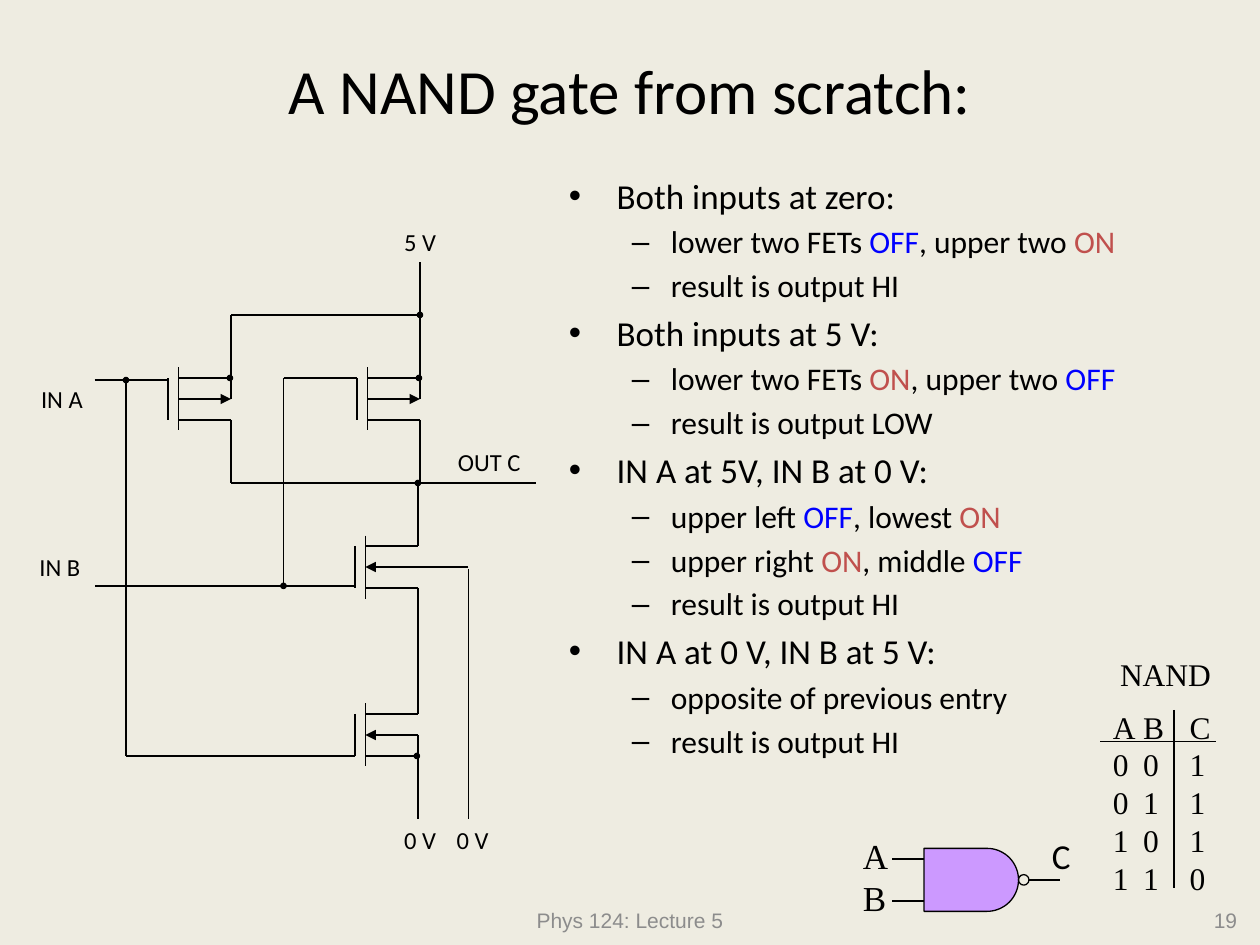
from dataclasses import dataclass
from math import cos, pi, sin

from pptx import Presentation
from pptx.dml.color import RGBColor
from pptx.enum.shapes import MSO_CONNECTOR as Link, MSO_SHAPE as Preset
from pptx.enum.text import MSO_ANCHOR as Anchor, MSO_AUTO_SIZE as Fit, PP_ALIGN as Align
from pptx.oxml.ns import qn
from pptx.util import Inches, Pt
from lxml.etree import SubElement

BLACK = RGBColor(0x00, 0x00, 0x00)
GREY = RGBColor(0x8C, 0x8C, 0x8C)
CREAM = RGBColor(0xEE, 0xEC, 0xE1)
LILAC = RGBColor(0xCC, 0x99, 0xFF)
STATES = {"ON": RGBColor(0xC0, 0x50, 0x4D), "OFF": RGBColor(0x00, 0x00, 0xFF)}
COLUMNS, ROWS = 120, 90
UNIT = Inches(10) / COLUMNS
TABLE_FONT = "Times New Roman"
CASES = [
    ("Both inputs at zero:",
     ["lower two FETs |OFF|, upper two |ON", "result is output HI"]),
    ("Both inputs at 5 V:",
     ["lower two FETs |ON|, upper two |OFF", "result is output LOW"]),
    ("IN A at 5V, IN B at 0 V:",
     ["upper left |OFF|, lowest |ON", "upper right |ON|, middle |OFF",
      "result is output HI"]),
    ("IN A at 0 V, IN B at 5 V:",
     ["opposite of previous entry", "result is output HI"]),
]


@dataclass
class Box:
    """A region of the slide, measured in grid columns and rows."""
    left: float
    top: float
    width: float = 0
    height: float = 0

    def inner(self, left, top, width=0, height=0):
        """Return a box placed relative to this one."""
        return Box(self.left + left, self.top + top, width, height)

    def emu(self):
        """Return left, top, width and height in slide lengths."""
        return [round(n * UNIT) for n in (self.left, self.top, self.width, self.height)]


def write(para, text, size=14, font="Calibri", color=BLACK, align=Align.LEFT):
    """Fill a paragraph, splitting at bars and colouring the switch states."""
    para.alignment = align
    for part in text.split("|"):
        span = para.add_run()
        span.text = part
        span.font.size = Pt(size)
        span.font.name = font
        span.font.color.rgb = STATES.get(part, color)


def add_text(page, box, lines, wrap=False, anchor=Anchor.TOP, **style):
    """Add a text box with one paragraph for each line and return its paragraphs."""
    frame = page.shapes.add_textbox(*box.emu()).text_frame
    frame.word_wrap = wrap
    frame.vertical_anchor = anchor
    for index, line in enumerate(lines):
        write(frame.add_paragraph() if index else frame.paragraphs[0], line, **style)
    return frame.paragraphs


def add_wire(page, box, start, end, arrow=False):
    """Draw a thin line between two grid points of a box."""
    ends = box.inner(*start).emu()[:2] + box.inner(*end).emu()[:2]
    wire = page.shapes.add_connector(Link.STRAIGHT, *ends)
    wire.line.color.rgb = BLACK
    wire.line.width = Pt(0.75)
    props = wire._element.spPr
    if arrow:
        SubElement(props.find(qn("a:ln")), qn("a:tailEnd"), type="triangle")
    SubElement(props, qn("a:effectLst"))


def outline(shape, fill=None):
    """Give a shape a thin black line and a plain or empty fill."""
    shape.shadow.inherit = False
    shape.line.color.rgb = BLACK
    shape.line.width = Pt(0.75)
    if fill is None:
        shape.fill.background()
    else:
        shape.fill.solid()
        shape.fill.fore_color.rgb = fill


def add_circle(page, box, center, size=0.5, fill=BLACK):
    """Add a circle centred on a grid point, by default a wire junction."""
    col, row = center
    place = box.inner(col - size / 2, row - size / 2, size, size)
    outline(page.shapes.add_shape(Preset.OVAL, *place.emu()), fill)


def add_transistor(page, box, gate_row, body, tie_row=None):
    """Draw a transistor with its leads, body arrow and optional body tie."""
    wires = [
        ((0, gate_row), (7, gate_row)), ((7, 0), (7, 4)), ((8, -1), (8, 5)),
        ((8, 0), (13, 0)), ((8, 4), (13, 4)), ((13, -6), (13, 0)), ((13, 4), (13, 10)),
    ]
    for start, end in wires:
        add_wire(page, box, start, end)
    add_wire(page, box, *body, arrow=True)
    if tie_row is not None:
        add_wire(page, box, (13, 2), (13, tie_row))
        add_circle(page, box, (12.9, tie_row))


def draw_circuit(page, box):
    """Draw the four transistors, the wires between them and their labels."""
    outward, inward = ((8, 2), (13, 2)), ((13, 2), (8, 2))
    add_transistor(page, box.inner(7, 15), 0.2, outward, tie_row=0)
    add_transistor(page, box.inner(25, 15), 0, outward, tie_row=0)
    add_transistor(page, box.inner(24.8, 31), 3.8, ((17.8, 2), (8, 2)))
    add_transistor(page, box.inner(24.8, 47), 4, inward, tie_row=4)
    wires = [
        ((38, 9), (20, 9)), ((10, 15), (10, 51)), ((10, 51), (25, 51)),
        ((25, 15), (25, 35)), ((25, 34.8), (7, 34.8)), ((20, 25), (49, 25)),
        ((38, 9), (38, 4)), ((42.6, 33.2), (42.6, 57)),
    ]
    for start, end in wires:
        add_wire(page, box, start, end)
    for joint in [(10, 15.2), (37.8, 25), (25, 34.8), (38, 9)]:
        add_circle(page, box, joint)
    labels = [("5 V", 38, 0), ("0 V", 38, 57), ("0 V", 43, 57),
              ("IN A", 3.9, 15), ("IN B", 3.7, 31), ("OUT C", 44.6, 21)]
    for text, center, row in labels:
        add_text(page, box.inner(center - 5, row, 10, 4), [text], align=Align.CENTER)


def add_bullet(para, mark, level, margin, hang, gap):
    """Turn a paragraph into a hanging bullet of the given level."""
    para.level = level
    para.space_before = Pt(gap)
    props = para._p.get_or_add_pPr()
    props.set("marL", str(Inches(margin)))
    props.set("indent", str(-Inches(hang)))
    SubElement(props, qn("a:buFont"), typeface="Arial")
    SubElement(props, qn("a:buChar"), char=mark)


def list_cases(page, box):
    """List each input case with its consequences."""
    frame = page.shapes.add_textbox(*box.emu()).text_frame
    frame.word_wrap = True
    para = frame.paragraphs[0]
    for index, (case, results) in enumerate(CASES):
        if index:
            para = frame.add_paragraph()
        write(para, case, size=20)
        add_bullet(para, "•", 0, 0.38, 0.38, 4.2)
        for result in results:
            para = frame.add_paragraph()
            write(para, result, size=18)
            add_bullet(para, "–", 1, 0.81, 0.31, 3.5)


def draw_truth_table(page, box):
    """Set the truth table in tabbed columns with its rules and heading."""
    rows = ["A\tB\tC", "0\t0\t1", "0\t1\t1", "1\t0\t1", "1\t1\t0"]
    for para in add_text(page, box.inner(0.8, 5, 15, 19), rows, size=18, font=TABLE_FONT):
        stops = SubElement(para._p.get_or_add_pPr(), qn("a:tabLst"))
        for stop in (0.24, 0.61):
            SubElement(stops, qn("a:tab"), pos=str(Inches(stop)), algn="l")
    add_wire(page, box, (0.8, 8.8), (11.8, 8.8))
    add_wire(page, box, (7.8, 5.8), (7.8, 22.8))
    add_text(page, box.inner(0, 0, 14, 6), ["NAND"], size=18, font=TABLE_FONT,
             align=Align.CENTER)


def draw_gate(page, box):
    """Draw the NAND symbol with its inputs, bubble and output."""
    radius, steps = 3, 36
    angles = [pi * step / steps - pi / 2 for step in range(steps + 1)]
    points = [(7, 1.9), *((13 + radius * cos(a), 4.9 + radius * sin(a)) for a in angles),
              (7, 7.9)]
    corners = [box.inner(*point).emu()[:2] for point in points]
    builder = page.shapes.build_freeform(*corners[0])
    builder.add_line_segments(corners[1:], close=True)
    outline(builder.convert_to_shape(), LILAC)
    for start, end, row in [(4, 7, 2.9), (4, 7, 6.9), (17, 20, 4.9)]:
        add_wire(page, box, (start, row), (end, row))
    add_circle(page, box, (16.5, 4.9), size=1, fill=None)
    add_text(page, box.inner(0, 0, 4.8, 9.2), ["A", "B"], size=20, font=TABLE_FONT)
    add_text(page, box.inner(18, 0, 4.8, 5.2), ["C"], wrap=True, size=20)


def set_title(page, box, text):
    """Place and format the title placeholder."""
    title = page.shapes.title
    title.left, title.top, title.width, title.height = box.emu()
    title.text_frame.auto_size = Fit.NONE
    title.text_frame.vertical_anchor = Anchor.MIDDLE
    write(title.text_frame.paragraphs[0], text, size=36, align=Align.CENTER)


def add_footer(page, box):
    """Add the lecture name and the page number."""
    style = dict(wrap=True, anchor=Anchor.MIDDLE, size=12, font="Arial", color=GREY)
    add_text(page, box.inner(0, 0, 38, box.height), ["Phys 124: Lecture 5"],
             align=Align.CENTER, **style)
    add_text(page, box.inner(box.width - 28, 0, 28, box.height), ["19"],
             align=Align.RIGHT, **style)


def main():
    """Build the slide and save the deck."""
    deck = Presentation()
    deck.slide_width, deck.slide_height = round(COLUMNS * UNIT), round(ROWS * UNIT)
    page = deck.slides.add_slide(deck.slide_layouts[5])
    page.background.fill.solid()
    page.background.fill.fore_color.rgb = CREAM
    add_footer(page, Box(41, 85.2, 78, 4.8))
    set_title(page, Box(9, 1, 102, 15), "A NAND gate from scratch:")
    draw_circuit(page, Box(2, 21, 49, 61))
    list_cases(page, Box(53, 16, 65, 66))
    draw_truth_table(page, Box(104, 61.8, 14, 24))
    draw_gate(page, Box(81, 78.9, 23, 9))
    deck.save("out.pptx")


if __name__ == "__main__":
    main()
